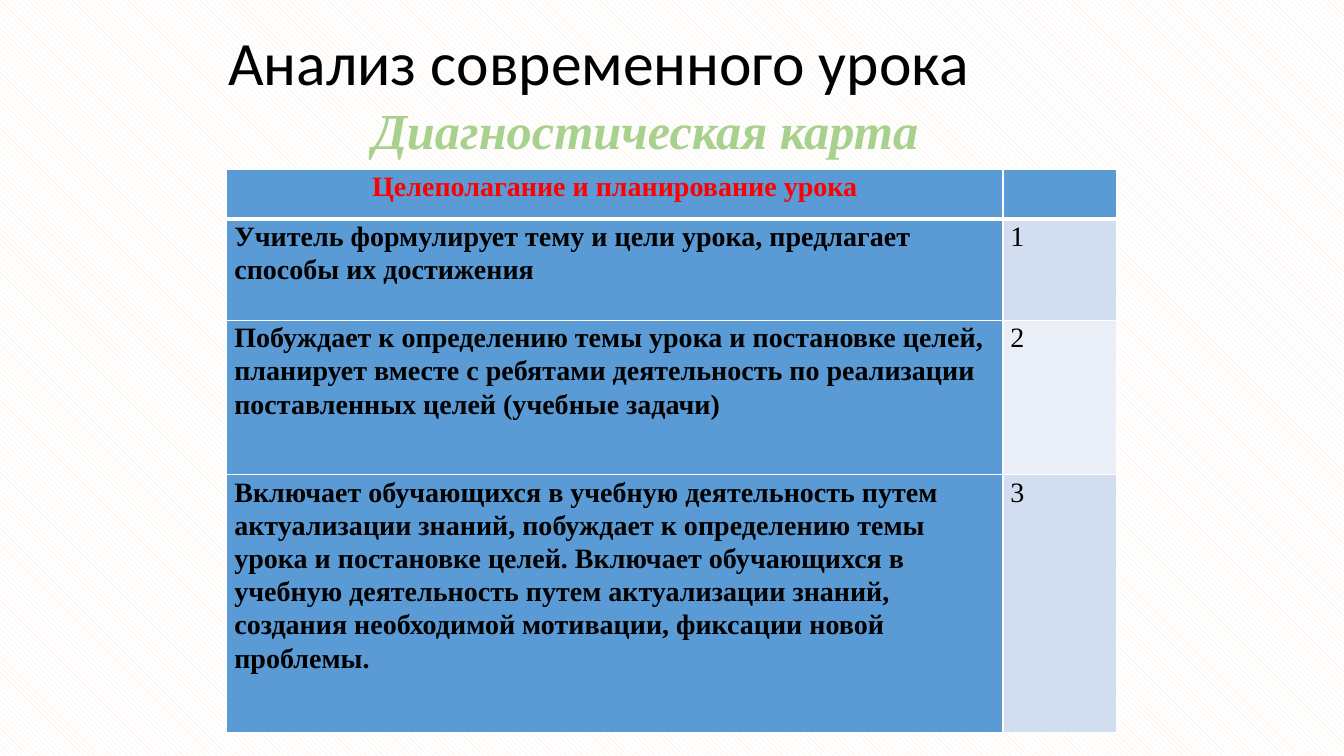
from lxml import etree
from pptx import Presentation
from pptx.dml.color import RGBColor
from pptx.enum.dml import MSO_PATTERN
from pptx.enum.text import MSO_ANCHOR, PP_ALIGN
from pptx.oxml.ns import qn
from pptx.util import Pt

STRIPES = MSO_PATTERN.WIDE_DOWNWARD_DIAGONAL
MIDDLE = MSO_ANCHOR.MIDDLE
LEFT, CENTER = PP_ALIGN.LEFT, PP_ALIGN.CENTER
SERIF = "Times New Roman"
BLUE, PALE, PALER = "5B9BD5", "D2DEEF", "EAEFF7"
BLACK, WHITE, RED, GREEN = "000000", "FFFFFF", "FF0000", "A9D18E"

HEADING = "Целеполагание и планирование урока"
CRITERIA = [
    "Учитель формулирует тему и цели урока, предлагает способы их достижения",
    "Побуждает к определению темы урока и постановке целей, планирует вместе "
    "с ребятами деятельность по реализации поставленных целей (учебные задачи)",
    "Включает обучающихся в учебную деятельность путем актуализации знаний, "
    "побуждает к определению темы урока и постановке целей. Включает обучающихся "
    "в учебную деятельность путем актуализации знаний, создания необходимой "
    "мотивации, фиксации новой проблемы.",
]
COLUMN_WIDTHS = [554.4, 81.4]
ROW_HEIGHTS = [35.3, 72.7, 110.2, 184.3]


def color(hex_code):
    return RGBColor.from_string(hex_code)


def write(frame, text, size, font, ink, bold=False, italic=False,
          align=LEFT, spacing=1.0):
    paragraph = frame.paragraphs[0]
    paragraph.alignment = align
    paragraph.line_spacing = spacing
    run = paragraph.add_run()
    run.text = text
    run.font.size = Pt(size)
    run.font.name = font
    run.font.bold = bold
    run.font.italic = italic
    run.font.color.rgb = color(ink)


def add_label(slide, box, text, size, font, ink, wrap=True, **style):
    label = slide.shapes.add_textbox(*map(Pt, box))
    frame = label.text_frame
    frame.word_wrap = wrap
    frame.vertical_anchor = MIDDLE
    write(frame, text, size, font, ink, **style)


def set_borders(cell, bottom_width):
    properties = cell._tc.get_or_add_tcPr()
    for side, width in (("L", 1), ("R", 1), ("T", 1), ("B", bottom_width)):
        line = etree.SubElement(properties, qn(f"a:ln{side}"), w=str(Pt(width)))
        fill = etree.SubElement(line, qn("a:solidFill"))
        etree.SubElement(fill, qn("a:srgbClr"), val=WHITE)


def fill_cell(cell, text, background, ink=BLACK, bold=False, align=LEFT,
              bottom_width=1):
    set_borders(cell, bottom_width)
    cell.fill.solid()
    cell.fill.fore_color.rgb = color(background)
    cell.margin_left = cell.margin_right = Pt(5.4)
    cell.margin_top = cell.margin_bottom = Pt(0)
    if text:
        write(cell.text_frame, text, 20, SERIF, ink, bold, align=align, spacing=1.07)


def add_criteria_table(slide):
    table = slide.shapes.add_table(
        len(ROW_HEIGHTS), len(COLUMN_WIDTHS), Pt(162), Pt(121),
        Pt(sum(COLUMN_WIDTHS)), Pt(sum(ROW_HEIGHTS))).table
    for column, width in zip(table.columns, COLUMN_WIDTHS):
        column.width = Pt(width)
    for row, height in zip(table.rows, ROW_HEIGHTS):
        row.height = Pt(height)
    fill_cell(table.cell(0, 0), HEADING, BLUE, RED, True, CENTER, bottom_width=3)
    fill_cell(table.cell(0, 1), "", BLUE, bottom_width=3)
    for score, criterion in enumerate(CRITERIA, start=1):
        fill_cell(table.cell(score, 0), criterion, BLUE, bold=True)
        fill_cell(table.cell(score, 1), str(score), PALE if score % 2 else PALER)


def set_background(slide):
    fill = slide.background.fill
    fill.patterned()
    fill.pattern = STRIPES
    fill.fore_color.rgb = color("FBE5D6")
    fill.back_color.rgb = color(WHITE)


def main():
    deck = Presentation()
    deck.slide_width, deck.slide_height = Pt(960), Pt(540)
    slide = deck.slides.add_slide(deck.slide_layouts[6])
    set_background(slide)
    add_label(slide, (156, 2, 648, 90), "Анализ современного урока",
              44, "Calibri", BLACK, spacing=0.9)
    add_criteria_table(slide)
    add_label(slide, (259, 67, 408, 51), "Диагностическая карта",
              36, SERIF, GREEN, wrap=False, bold=True, italic=True)
    deck.save("out.pptx")


if __name__ == "__main__":
    main()
